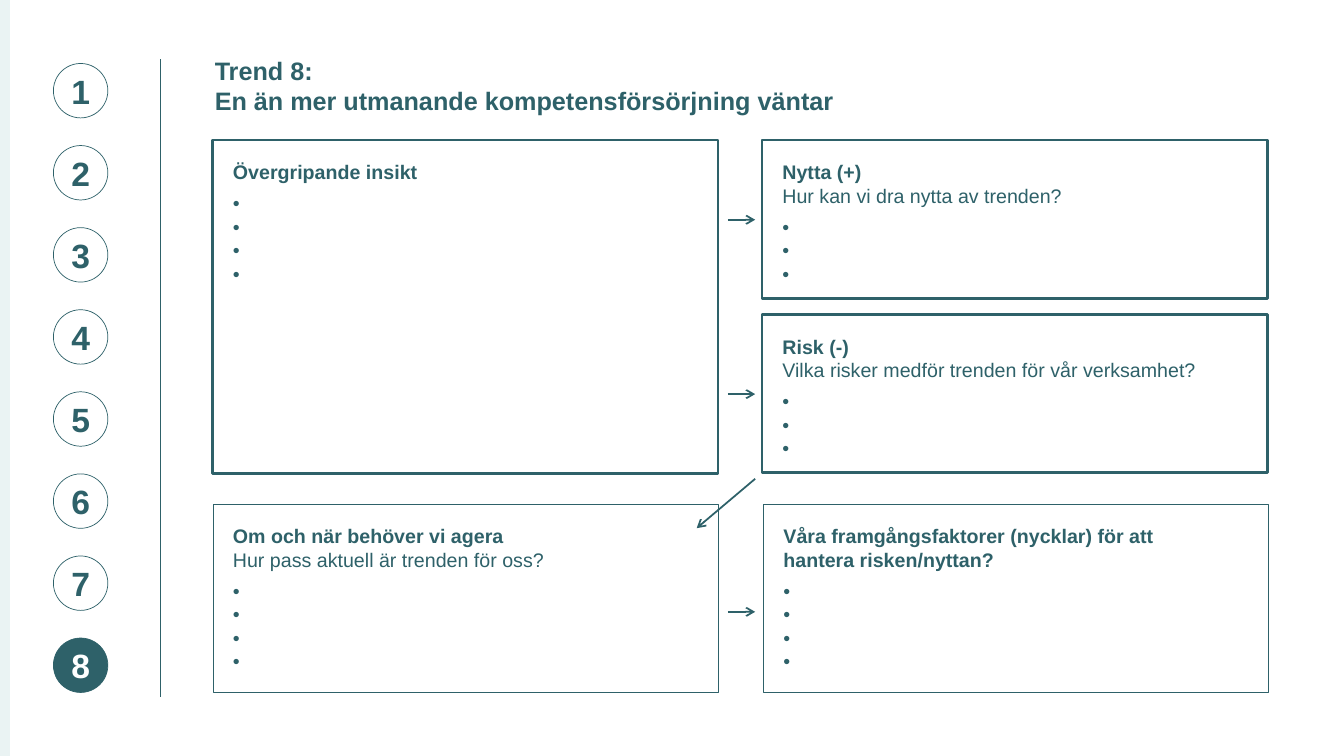
from pptx import Presentation
from pptx import util as u
from pptx.dml.color import RGBColor
from pptx.enum import shapes, text
from pptx.oxml.ns import qn
from lxml import etree

INK, WHITE, TINT = "2E6169", "FFFFFF", "EAF3F3"
SANS, SERIF = "Arial", "TeX Gyre Schola"


def color(code):
    return RGBColor.from_string(code)


def style(run, code=INK, **form):
    for key, val in form.items():
        setattr(run.font, key, val)
    run.font.color.rgb = color(code)


def frame(tf, inset, anchor):
    form = {"word_wrap": True, "auto_size": text.MSO_AUTO_SIZE.NONE,
            "vertical_anchor": anchor}
    for side in ("left", "top", "right", "bottom"):
        form["margin_" + side] = u.Inches(inset)
    for key, val in form.items():
        setattr(tf, key, val)


def write(para, lines, size):
    """Lines are (text, bold) pairs parted by line breaks."""
    for i, (words, bold) in enumerate(lines):
        if i:
            para.add_line_break()
        run = para.add_run()
        run.text = words
        style(run, name=SANS, size=u.Pt(size), bold=bold)
    # The break carries the body typeface, which sets the line height
    for gap in para._p.findall(qn("a:br")):
        props = etree.SubElement(gap, qn("a:rPr"), sz=str(size * 100))
        etree.SubElement(props, qn("a:latin"), typeface=SERIF)


def shape(slide, kind, box, fill=None, width=None):
    item = slide.shapes.add_shape(kind, *map(u.Inches, box))
    item.shadow.inherit = False
    if fill:
        item.fill.solid()
        item.fill.fore_color.rgb = color(fill)
    else:
        item.fill.background()
    if width:
        item.line.color.rgb = color(INK)
        item.line.width = u.Pt(width)
    else:
        item.line.fill.background()
    return item


def line(slide, ends, width, arrow=False):
    item = slide.shapes.add_connector(
        shapes.MSO_CONNECTOR.STRAIGHT, *map(u.Inches, ends))
    item.line.color.rgb = color(INK)
    item.line.width = u.Pt(width)
    if arrow:
        etree.SubElement(item.line._get_or_add_ln(), qn("a:tailEnd"), type="arrow")
    etree.SubElement(item._element.spPr, qn("a:effectLst"))


def sheet(slide):
    # Tinted edge to the left of a white sheet
    slide.background.fill.solid()
    slide.background.fill.fore_color.rgb = color(TINT)
    page = shape(slide, shapes.MSO_SHAPE.RECTANGLE, (0.1, 0, 13.23, 7.5), WHITE)
    slide.shapes._spTree.insert(2, page._element)


def heading(slide, box, lines):
    title = slide.shapes.title
    title.left, title.top, title.width, title.height = map(u.Inches, box)
    frame(title.text_frame, 0, text.MSO_ANCHOR.TOP)
    para = title.text_frame.paragraphs[0]
    para.alignment = text.PP_ALIGN.LEFT
    write(para, [(words, True) for words in lines], 18)


def steps(slide, left, top, count, active):
    size, pitch = 0.54, 5.7 / (count - 1)
    for i in range(count):
        on = i + 1 == active
        dot = shape(slide, shapes.MSO_SHAPE.OVAL,
                    (left, top + i * pitch, size, size), INK if on else WHITE, 0.5)
        frame(dot.text_frame, 0, text.MSO_ANCHOR.MIDDLE)
        para = dot.text_frame.paragraphs[0]
        para.alignment = text.PP_ALIGN.CENTER
        run = para.add_run()
        run.text = str(i + 1)
        style(run, WHITE if on else INK, name=SANS, size=u.Pt(24), bold=True)


def panel(slide, box, width, lines, count):
    item = shape(slide, shapes.MSO_SHAPE.RECTANGLE, box, width=width)
    tf = item.text_frame
    frame(tf, 0.2, text.MSO_ANCHOR.TOP)
    para = tf.paragraphs[0]
    para.alignment = text.PP_ALIGN.LEFT
    para.space_after = u.Pt(6)
    write(para, lines, 14)
    # Open bullets to fill in
    for _ in range(count):
        para = tf.add_paragraph()
        para.alignment = text.PP_ALIGN.LEFT
        props = para._p.get_or_add_pPr()
        indent = u.Inches(0.31)
        props.set("marL", str(indent))
        props.set("indent", str(-indent))
        etree.SubElement(props, qn("a:buFont"), typeface=SANS)
        etree.SubElement(props, qn("a:buChar"), char="•")
        run = para.add_run()
        run.text = " "
        style(run, name=SERIF, size=u.Pt(14), bold=False)


def canvas(slide, left, top):
    wide, right, low = 5.01, left + 5.45, top + 3.61
    half, step = 1.57, 1.73
    panel(slide, (left, top, wide, 3.31), 1.75, [("Övergripande insikt", True)], 4)
    pair = [("Nytta (+)", "Hur kan vi dra nytta av trenden?"),
            ("Risk (-)", "Vilka risker medför trenden för vår verksamhet?")]
    for i, (name, ask) in enumerate(pair):
        panel(slide, (right, top + i * step, wide, half), 1.75,
              [(name, True), (ask, False)], 3)
    panel(slide, (left, low, wide, 1.87), 0.25,
          [("Om och när behöver vi agera", True),
           ("Hur pass aktuell är trenden för oss?", False)], 4)
    panel(slide, (right + 0.01, low, wide, 1.87), 0.25,
          [("Våra framgångsfaktorer (nycklar) för att", True),
           ("hantera risken/nyttan?", True)], 4)
    # Arrows between the panels
    start, end = left + wide + 0.1, right - 0.07
    for y in (top + 0.79, top + 0.79 + step, low + 1.07):
        line(slide, (start, y, end, y), 1.25, True)
    line(slide, (end, low - 0.25, end - 0.58, low + 0.24), 1.25, True)


def main():
    deck = Presentation()
    deck.slide_width, deck.slide_height = u.Inches(13.33), u.Inches(7.5)
    slide = deck.slides.add_slide(deck.slide_layouts[5])
    sheet(slide)
    heading(slide, (2.13, 0.55, 10.44, 0.61),
            ["Trend 8:", "En än mer utmanande kompetensförsörjning väntar"])
    steps(slide, 0.53, 0.63, 8, 8)
    line(slide, (1.59, 0.59, 1.59, 6.91), 0.25)
    canvas(slide, 2.11, 1.39)
    deck.save("out.pptx")


if __name__ == "__main__":
    main()
